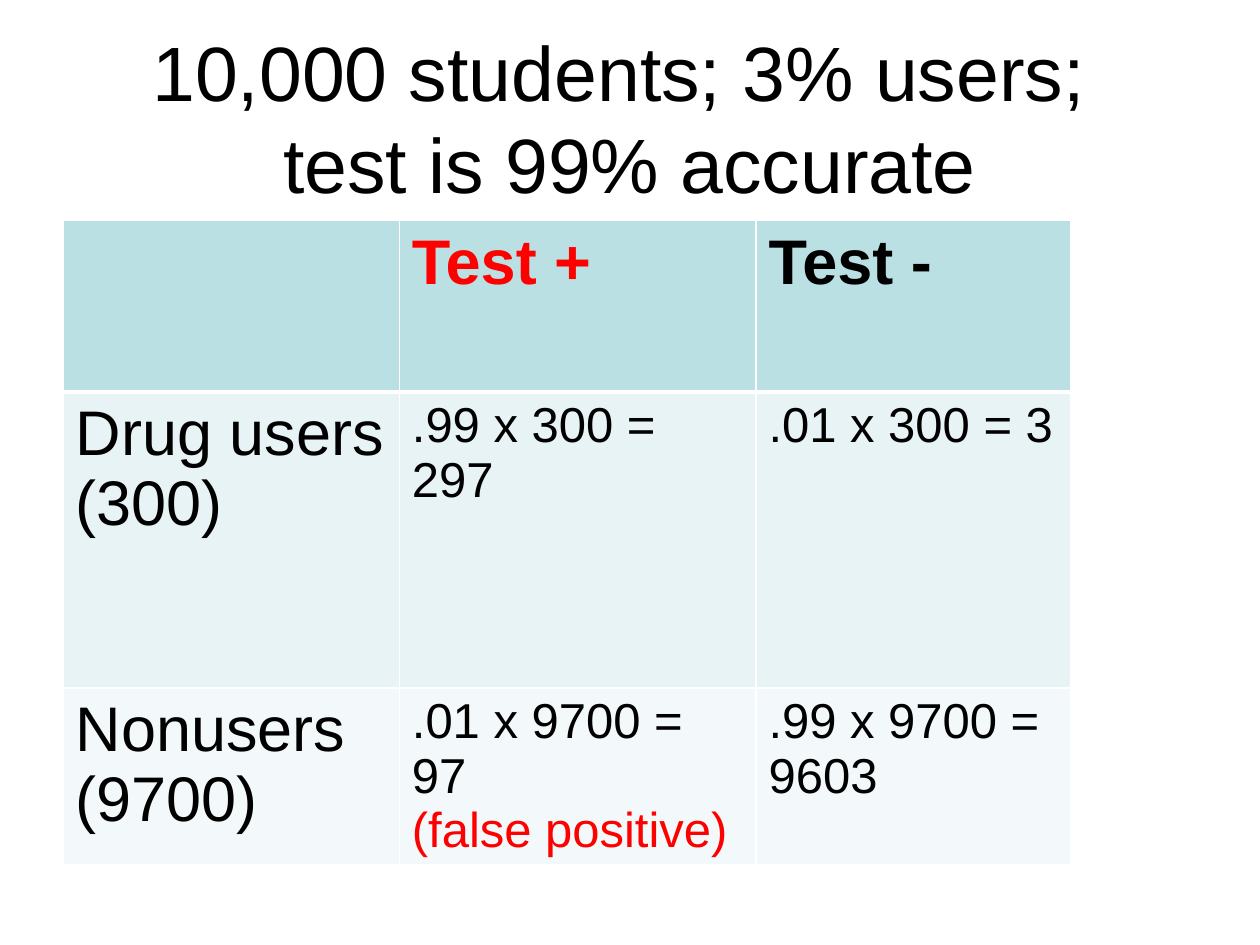
from lxml import etree
from pptx import Presentation
from pptx.dml.color import RGBColor
from pptx.enum import text
from pptx.oxml import ns
from pptx.util import Cm, Pt

BLACK = RGBColor(0x00, 0x00, 0x00)
RED = RGBColor(0xFF, 0x00, 0x00)
WHITE = RGBColor(0xFF, 0xFF, 0xFF)
ROW_FILLS = [RGBColor(0xBB, 0xE0, 0xE3), RGBColor(0xE7, 0xF3, 0xF4),
             RGBColor(0xF3, 0xF9, 0xFA)]
RED_TEXTS = ("Test +", "(false positive)")


def style_paragraph(p, size, color, bold=False):
    for r in p.runs:
        r.font.name = "Arial"
        r.font.size = Pt(size)
        r.font.bold = bold
        r.font.color.rgb = color


def add_border(cell, side, width):
    ln = etree.SubElement(cell._tc.get_or_add_tcPr(), ns.qn("a:ln" + side),
                          w=str(Pt(width)))
    fill = etree.SubElement(ln, ns.qn("a:solidFill"))
    etree.SubElement(fill, ns.qn("a:srgbClr"), val=str(WHITE))


prs = Presentation()
prs.slide_width, prs.slide_height = Cm(25.4), Cm(19.05)
slide = prs.slides.add_slide(prs.slide_layouts[5])

# Title
title = slide.shapes.title
title.left, title.top = Cm(1.27), Cm(0.76)
title.width, title.height = Cm(22.86), Cm(3.18)
tf = title.text_frame
tf.text = "10,000 students; 3% users; \vtest is 99% accurate"
tf.word_wrap = True
tf.auto_size = text.MSO_AUTO_SIZE.NONE
tf.vertical_anchor = text.MSO_ANCHOR.MIDDLE
tf.paragraphs[0].alignment = text.PP_ALIGN.CENTER
style_paragraph(tf.paragraphs[0], 44, BLACK)

# Table of test outcomes
rows = [
    ["", "Test +", "Test -"],
    ["Drug users (300)", ".99 x 300 = 297", ".01 x 300 = 3"],
    ["Nonusers (9700)", ".01 x 9700 = 97\n(false positive)", ".99 x 9700 = 9603"],
]
col_widths = [6.78, 7.19, 6.35]
row_heights = [3.45, 5.97, 3.45]
table = slide.shapes.add_table(3, 3, Cm(1.27), Cm(4.45), Cm(sum(col_widths)),
                               Cm(sum(row_heights))).table
for column, width in zip(table.columns, col_widths):
    column.width = Cm(width)
for row, height in zip(table.rows, row_heights):
    row.height = Cm(height)

# Cell text, borders and fills
for i, row in enumerate(rows):
    for j, content in enumerate(row):
        cell = table.cell(i, j)
        cell.text_frame.text = content
        header = i == 0
        for p in cell.text_frame.paragraphs:
            style_paragraph(p, 36 if header or j == 0 else 28,
                            RED if p.text in RED_TEXTS else BLACK, header)
        for side in "LRTB":
            thick = (side == "B" and i == 0) or (side == "T" and i == 1)
            add_border(cell, side, 3 if thick else 1)
        cell.fill.solid()
        cell.fill.fore_color.rgb = ROW_FILLS[i]

prs.save("out.pptx")
